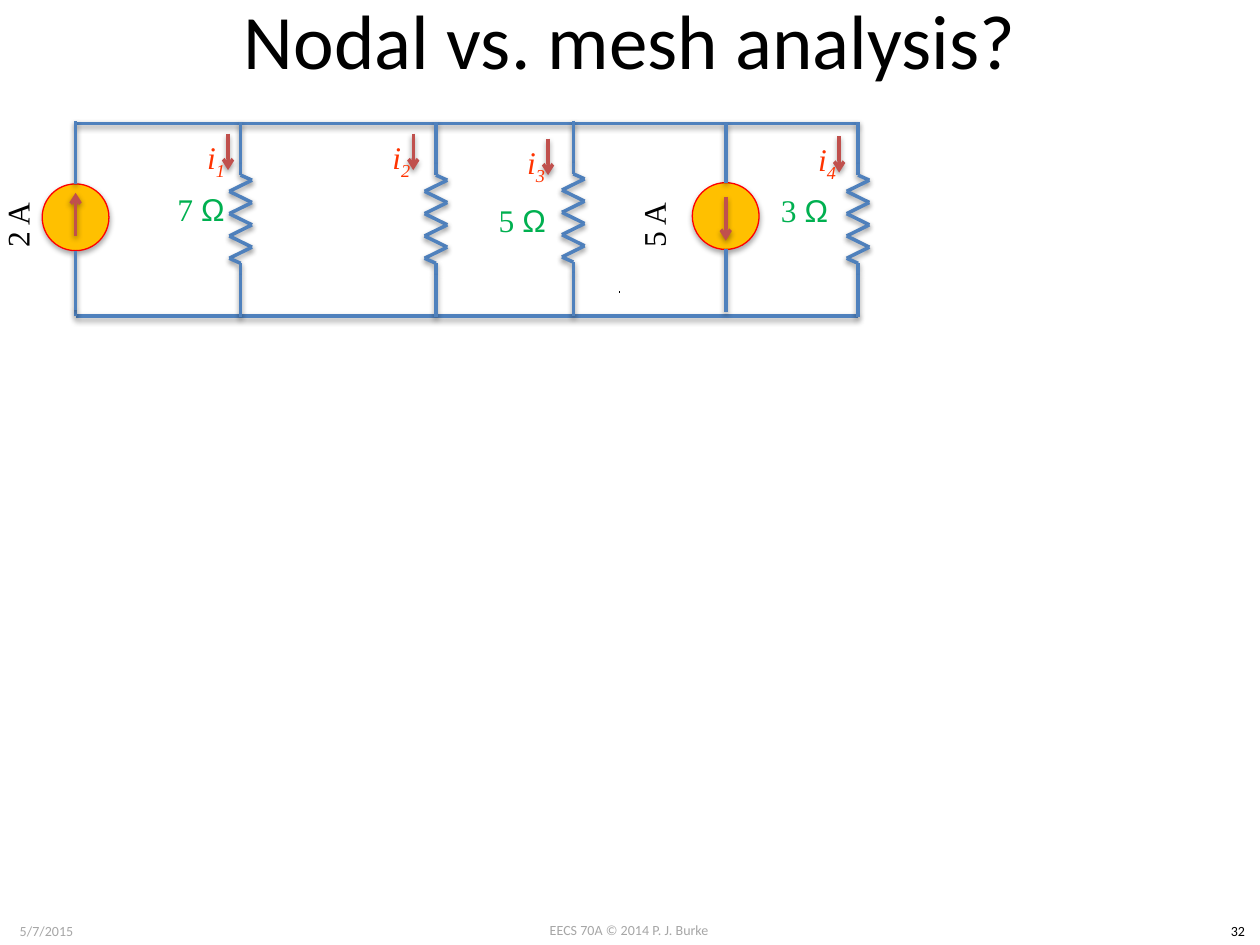
from itertools import pairwise
from lxml import etree
from pptx import Presentation
from pptx.dml.color import RGBColor
from pptx.enum.shapes import MSO_CONNECTOR, MSO_SHAPE
from pptx.enum.text import MSO_ANCHOR, PP_ALIGN
from pptx.oxml import parse_xml
from pptx.oxml.ns import qn
from pptx.util import Inches, Pt

BLUE = RGBColor(0x4F, 0x81, 0xBD)
BRICK = RGBColor(0xC0, 0x50, 0x4D)
GOLD = RGBColor(0xFF, 0xC0, 0x00)
RED = RGBColor(0xFF, 0x00, 0x00)
ORANGE = RGBColor(0xFF, 0x33, 0x00)
GREEN = RGBColor(0x00, 0xB0, 0x50)
GRAY = RGBColor(0xA6, 0xA6, 0xA6)
BLACK = RGBColor(0, 0, 0)
SHADOW = (
    '<a:effectLst xmlns:a="http://schemas.openxmlformats.org/drawingml/2006/main">'
    '<a:outerShdw blurRad="40000" dist="{}" dir="5400000" rotWithShape="0">'
    '<a:srgbClr val="000000"><a:alpha val="{}"/></a:srgbClr>'
    '</a:outerShdw></a:effectLst>'
)


class Circuit:
    serif, sans, plain = "Times New Roman", "Arial", "Calibri"
    weight = Pt(2)

    def __init__(self, slide):
        self.slide = slide
        self.shapes = slide.shapes

    def shade(self, shape, dist, alpha):
        props = shape._element.spPr
        for old in props.findall(qn("a:effectLst")):
            props.remove(old)
        props.append(parse_xml(SHADOW.format(dist, alpha)))

    def wire(self, x1, y1, x2, y2, color=BLUE):
        line = self.shapes.add_connector(
            MSO_CONNECTOR.STRAIGHT, Inches(x1), Inches(y1), Inches(x2), Inches(y2))
        line.line.color.rgb = color
        line.line.width = self.weight
        self.shade(line, 20000, 38000)
        return line

    def arrow(self, x, y1, y2):
        line = self.wire(x, y1, x, y2, BRICK)
        etree.SubElement(line.line._get_or_add_ln(), qn("a:tailEnd"), type="arrow")

    def text(self, box, parts, size, color, font=None, turn=0):
        """Write parts as the runs of one centred line."""
        shape = self.shapes.add_textbox(*map(Inches, box))
        shape.rotation = turn
        frame = shape.text_frame
        frame.word_wrap = True
        frame.vertical_anchor = MSO_ANCHOR.MIDDLE
        para = frame.paragraphs[0]
        para.alignment = PP_ALIGN.CENTER
        for part in parts:
            run = para.add_run()
            run.text = part
            run.font.name = font or self.serif
            run.font.size = Pt(size)
            run.font.color.rgb = color
        return para.runs

    def value(self, x, y, ohms):
        runs = self.text((x, y, 1.19, 0.73), (ohms + " ", "Ω"), 18, GREEN)
        runs[1].font.name = self.sans

    def branch(self, x, y, sub):
        """Current arrow with its subscripted name."""
        self.arrow(x, y, y + 0.29)
        runs = self.text((x - 0.48, y - 0.1, 0.77, 0.61), ("i", sub), 18, ORANGE)
        for run in runs:
            run.font.italic = True
        runs[1].font._element.set("baseline", "-25000")

    def resist(self, x, top):
        """Leads and a zigzag of eight teeth."""
        teeth = [(x + 0.09 * (-1) ** n, top + 0.46 + 0.62 * n / 7) for n in range(8)]
        points = [(x, top), (x, top + 0.33), (x, top + 0.42), *teeth,
                  (x, top + 1.12), (x, top + 1.21), (x, top + 1.55)]
        for start, end in pairwise(points):
            self.wire(*start, *end)

    def source(self, x, y, tail, head, top, base):
        """Current source: disc, arrow and two leads."""
        size = 0.53
        disc = self.shapes.add_shape(
            MSO_SHAPE.OVAL, Inches(x - size / 2), Inches(y), Inches(size), Inches(size))
        disc.fill.solid()
        disc.fill.fore_color.rgb = GOLD
        disc.line.color.rgb = RED
        disc.line.width = Pt(0.75)
        self.shade(disc, 23000, 35000)
        self.arrow(x, tail, head)
        self.wire(x, y, x, top)
        self.wire(x, y + size, x, base)

    def amps(self, x, name):
        self.text((x, 1.42, 1.19, 0.73), (name,), 18, BLACK, turn=270)

    def dot(self, x, y):
        pen = self.shapes.build_freeform(Inches(x), Inches(y))
        pen.add_line_segments([(Inches(x - 0.01), Inches(y))], close=False)
        mark = pen.convert_to_shape()
        mark.shadow.inherit = False
        mark.fill.background()
        mark.line.color.rgb = BLACK
        mark.line.width = Pt(1)


def main():
    deck = Presentation()
    deck.slide_width, deck.slide_height = Inches(10), Inches(7.5)
    draw = Circuit(deck.slides.add_slide(deck.slide_layouts[6]))

    # Footer and title
    for box, note, color in (
        ((3.83, 7.26, 2.33, 0.24), "EECS 70A © 2014 P. J. Burke", GRAY),
        ((0, 7.27, 0.74, 0.24), "5/7/2015", GRAY),
        ((9.65, 7.27, 0.35, 0.24), "32", BLACK),
    ):
        draw.text(box, (note,), 8, color, draw.plain)
    draw.text((0.5, -0.17, 9, 0.95), ("Nodal vs. mesh analysis?",), 44, BLACK, draw.plain)

    # Rails
    left, right = 0.6, 6.81
    draw.wire(right, 0.98, left, 0.98)
    draw.wire(left, 2.51, right, 2.51)
    draw.wire(left, 2.51, left, 2.45)

    # Resistors
    for x, top in ((1.91, 0.97), (3.46, 0.97), (4.55, 0.96), (right, 0.97)):
        draw.resist(x, top)
    for x, y, ohms in ((1, 1.29, "7"), (3.55, 1.38, "5"), (5.79, 1.3, "3")):
        draw.value(x, y, ohms)

    # Current sources
    draw.source(left, 1.46, 1.87, 1.53, 0.96, 2.46)
    draw.source(5.76, 1.45, 1.56, 1.91, 0.98, 2.48)
    draw.amps(-0.46, "2 A")
    draw.amps(4.59, "5 A")

    # Branch currents
    for x, y, sub in ((1.81, 1.06, "1"), (3.28, 1.06, "2"),
                      (4.35, 1.1, "3"), (6.66, 1.08, "4")):
        draw.branch(x, y, sub)

    # Pen mark
    draw.dot(4.92, 2.32)

    deck.save("out.pptx")


if __name__ == "__main__":
    main()
